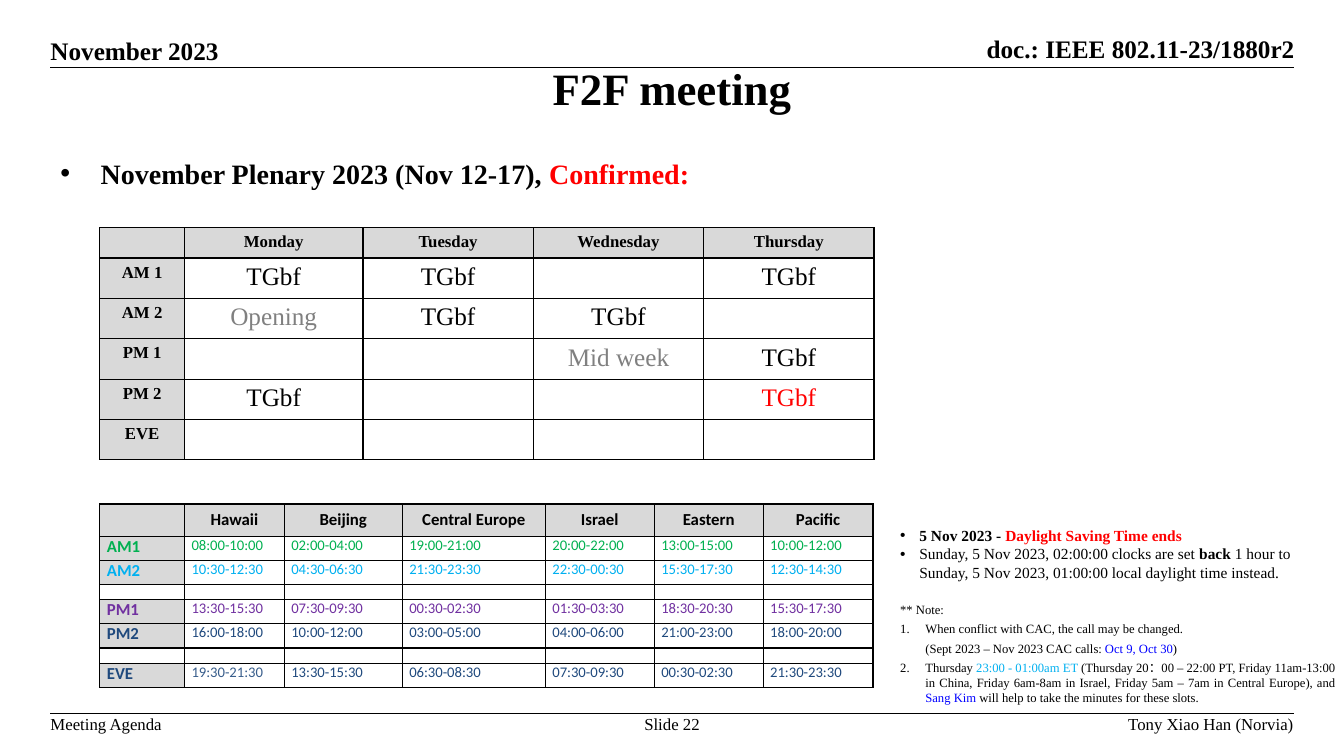
from lxml import etree
from pptx import Presentation
from pptx.dml.color import RGBColor
from pptx.enum.shapes import MSO_CONNECTOR, MSO_SHAPE
from pptx.enum.text import MSO_ANCHOR, PP_ALIGN
from pptx.oxml.ns import qn
from pptx.util import Inches, Pt

LEFT, CENTER, RIGHT, JUSTIFY = PP_ALIGN.LEFT, PP_ALIGN.CENTER, PP_ALIGN.RIGHT, PP_ALIGN.JUSTIFY
TOP, MIDDLE, BOTTOM = MSO_ANCHOR.TOP, MSO_ANCHOR.MIDDLE, MSO_ANCHOR.BOTTOM
STRAIGHT, RECTANGLE = MSO_CONNECTOR.STRAIGHT, MSO_SHAPE.RECTANGLE

THEME = {
    "serif": "Times New Roman", "sans": "Calibri",
    "black": "000000", "white": "FFFFFF", "header": "D9D9D9", "grey": "808080",
    "red": "FF0000", "blue": "0000FF", "green": "00B050", "sky": "00B0F0",
    "purple": "7030A0", "navy": "1F497D", "steel": "385D8B",
    "title": 32, "topic": 20, "banner": 18, "slot": 18, "label": 12,
    "time": 10.5, "clock": 11, "note": 9, "gap": 6,
}


def write(paragraph, pieces, size, color="black", bold=False, font="serif",
          align=LEFT, after=0, indent=0, bullet=None):
    paragraph.alignment = align
    paragraph.space_after = Pt(after)
    properties = paragraph._p.get_or_add_pPr()
    if indent:
        properties.set("marL", str(Inches(indent)))
        properties.set("indent", str(-Inches(indent) if bullet else 0))
    if bullet:
        bullet_color = etree.SubElement(properties, qn("a:buClr"))
        etree.SubElement(bullet_color, qn("a:srgbClr"), val=THEME["black"])
        if bullet == "•":
            etree.SubElement(properties, qn("a:buFont"), typeface="Arial")
            etree.SubElement(properties, qn("a:buChar"), char=bullet)
        else:
            etree.SubElement(properties, qn("a:buAutoNum"), type="arabicPeriod", startAt=bullet)
    paragraph.font.name = THEME[font]
    paragraph.font.size = Pt(THEME[size])
    paragraph.font.bold = bold
    paragraph.font.color.rgb = RGBColor.from_string(THEME[color])
    for text, changes in pieces:
        run = paragraph.add_run()
        run.text = text
        if "color" in changes:
            run.font.color.rgb = RGBColor.from_string(THEME[changes["color"]])
        if "bold" in changes:
            run.font.bold = changes["bold"]
    if not pieces:
        etree.SubElement(paragraph._p, qn("a:endParaRPr"), sz=str(THEME[size] * 100))


def add_grid(slide, left, top, widths, heights):
    table = slide.shapes.add_table(len(heights), len(widths), Inches(left), Inches(top),
                                   Inches(sum(widths)), Inches(sum(heights))).table
    table.first_row = table.horz_banding = False
    for column, width in zip(table.columns, widths):
        column.width = Inches(width)
    for row, height in zip(table.rows, heights):
        row.height = Inches(height)
    for cell in table.iter_cells():
        cell_properties = cell._tc.get_or_add_tcPr()
        for side in ("a:lnL", "a:lnR", "a:lnT", "a:lnB"):
            border = etree.SubElement(cell_properties, qn(side), w=str(Pt(1)))
            border_fill = etree.SubElement(border, qn("a:solidFill"))
            etree.SubElement(border_fill, qn("a:srgbClr"), val=THEME["black"])
        cell.fill.background()
    return table


presentation = Presentation()
presentation.slide_width = Inches(13.33)
presentation.slide_height = Inches(7.5)
slide = presentation.slides.add_slide(presentation.slide_layouts[6])

for rule_y in (0.67, 7.08):
    rule = slide.shapes.add_connector(STRAIGHT, Inches(0.5), Inches(rule_y), Inches(12.83), Inches(rule_y))
    rule.line.color.rgb = RGBColor.from_string(THEME["black"])
    rule.line.width = Pt(1)
    etree.SubElement(rule._element.spPr, qn("a:effectLst"))

captions = [
    ("doc.: IEEE 802.11-23/1880r2", 9.12, 0.33, 3.72, 0.3, "banner", True, RIGHT, BOTTOM),
    ("November 2023", 0.5, 0.35, 1.69, 0.3, "banner", True, LEFT, BOTTOM),
    ("Meeting Agenda", 0.5, 7.08, 1.12, 0.2, "label", False, LEFT, TOP),
    ("Slide 22", 6.37, 7.08, 0.59, 0.2, "label", False, CENTER, TOP),
    ("Tony Xiao Han (Norvia)", 8.82, 7.08, 4.01, 0.2, "label", False, RIGHT, TOP),
    ("F2F meeting", 0, 0.58, 13.33, 0.58, "title", True, CENTER, MIDDLE),
]
for text, left, top, width, height, size, bold, align, anchor in captions:
    caption = slide.shapes.add_textbox(Inches(left), Inches(top), Inches(width), Inches(height))
    frame = caption.text_frame
    frame.margin_left = frame.margin_right = frame.margin_top = frame.margin_bottom = 0
    frame.word_wrap = width > 4
    frame.vertical_anchor = anchor
    write(frame.paragraphs[0], [(text, {})], size, bold=bold, align=align)

topic = slide.shapes.add_textbox(Inches(0.5), Inches(1.5), Inches(7.17), Inches(0.92))
topic.text_frame.word_wrap = True
write(topic.text_frame.paragraphs[0],
      [("November Plenary 2023 (Nov 12-17), ", {}), ("Confirmed:", {"color": "red"})],
      "topic", bold=True, align=JUSTIFY, after=6, indent=0.4, bullet="•")

time_zones = [
    ("black", ["", "Hawaii", "Beijing", "Central Europe", "Israel", "Eastern", "Pacific"]),
    ("green", ["AM1", "08:00-10:00", "02:00-04:00", "19:00-21:00", "20:00-22:00", "13:00-15:00", "10:00-12:00"]),
    ("sky", ["AM2", "10:30-12:30", "04:30-06:30", "21:30-23:30", "22:30-00:30", "15:30-17:30", "12:30-14:30"]),
    ("black", [""] * 7),
    ("purple", ["PM1", "13:30-15:30", "07:30-09:30", "00:30-02:30", "01:30-03:30", "18:30-20:30", "15:30-17:30"]),
    ("navy", ["PM2", "16:00-18:00", "10:00-12:00", "03:00-05:00", "04:00-06:00", "21:00-23:00", "18:00-20:00"]),
    ("black", [""] * 7),
    ("navy", ["EVE", "19:30-21:30", "13:30-15:30", "06:30-08:30", "07:30-09:30", "00:30-02:30", "21:30-23:30"]),
]
zone_table = add_grid(slide, 0.99, 5, [0.84, 0.99, 1.17, 1.42, 1.08, 1.08, 1.09],
                      [0.32, 0.24, 0.24, 0.15, 0.24, 0.24, 0.15, 0.24])
for row, (row_color, texts) in enumerate(time_zones):
    for column, text in enumerate(texts):
        cell = zone_table.cell(row, column)
        cell.margin_left = cell.margin_right = Inches(0.07)
        cell.margin_top = cell.margin_bottom = 0
        is_label = row == 0 or column == 0
        if row == 0 or (is_label and text):
            cell.fill.solid()
            cell.fill.fore_color.rgb = RGBColor.from_string(THEME["header"])
        if row == 0:
            cell.vertical_anchor = MIDDLE
        color = "steel" if text == "19:30-21:30" else row_color
        size = ("label" if is_label else "time") if text else "gap"
        write(cell.text_frame.paragraphs[0], [(text, {})] if text else [], size, color, is_label,
              "sans", CENTER if row == 0 else LEFT, after=6 if text else 0)

clock_box = slide.shapes.add_shape(RECTANGLE, Inches(8.83), Inches(5.17), Inches(4.15), Inches(0.66))
clock_box.shadow.inherit = False
clock_box.fill.solid()
clock_box.fill.fore_color.rgb = RGBColor.from_string(THEME["white"])
clock_box.line.fill.background()
frame = clock_box.text_frame
frame.word_wrap = True
frame.vertical_anchor = TOP
write(frame.paragraphs[0], [("5 Nov 2023 - ", {}), ("Daylight Saving Time ends", {"color": "red"})],
      "clock", bold=True, indent=0.19, bullet="•")
write(frame.add_paragraph(),
      [("Sunday, 5 Nov 2023, 02:00:00 clocks are set ", {}), ("back", {"bold": True}),
       (" 1 hour to Sunday, 5 Nov 2023, 01:00:00 local daylight time instead.", {})],
      "clock", indent=0.19, bullet="•")

notes = [
    (0, None, [("** Note:", {})]),
    (0.25, "1", [("When conflict with CAC, the call may be changed.", {})]),
    (0.25, None, [("(Sept 2023 – Nov 2023 CAC calls: ", {}), ("Oct 9, Oct 30", {"color": "blue"}), (")", {})]),
    (0.25, "2", [("Thursday ", {}), ("23:00 - 01:00am ET ", {"color": "sky"}),
                 ("(Thursday 20：00 – 22:00 PT, Friday 11am-13:00 in China, Friday 6am-8am in Israel, "
                  "Friday 5am – 7am in Central Europe), and ", {}),
                 ("Sang Kim ", {"color": "blue"}),
                 ("will help to take the minutes for these slots.", {})]),
]
note_box = slide.shapes.add_textbox(Inches(8.83), Inches(5.92), Inches(4.51), Inches(1.14))
frame = note_box.text_frame
frame.word_wrap = True
for index, (indent, bullet, pieces) in enumerate(notes):
    paragraph = frame.add_paragraph() if index else frame.paragraphs[0]
    write(paragraph, pieces, "note", align=JUSTIFY, after=3, indent=indent, bullet=bullet)

sessions = [
    ["", "Monday", "Tuesday", "Wednesday", "Thursday"],
    ["AM 1", "TGbf", "TGbf", "", "TGbf"],
    ["AM 2", "Opening", "TGbf", "TGbf", ""],
    ["PM 1", "", "", "Mid week", "TGbf"],
    ["PM 2", "TGbf", "", "", "TGbf"],
    ["EVE", "", "", "", ""],
]
session_table = add_grid(slide, 0.99, 2.26, [0.84, 1.77] + [1.69] * 3, [0.3] + [0.4] * 5)
for row, texts in enumerate(sessions):
    for column, text in enumerate(texts):
        cell = session_table.cell(row, column)
        is_label = row == 0 or column == 0
        if is_label:
            cell.fill.solid()
            cell.fill.fore_color.rgb = RGBColor.from_string(THEME["header"])
        color = "grey" if text in ("Opening", "Mid week") else "black"
        if (row, column) == (4, 4):
            color = "red"
        write(cell.text_frame.paragraphs[0], [(text, {})] if text else [],
              "label" if is_label or not text else "slot", color, is_label, align=CENTER)

presentation.save("out.pptx")
